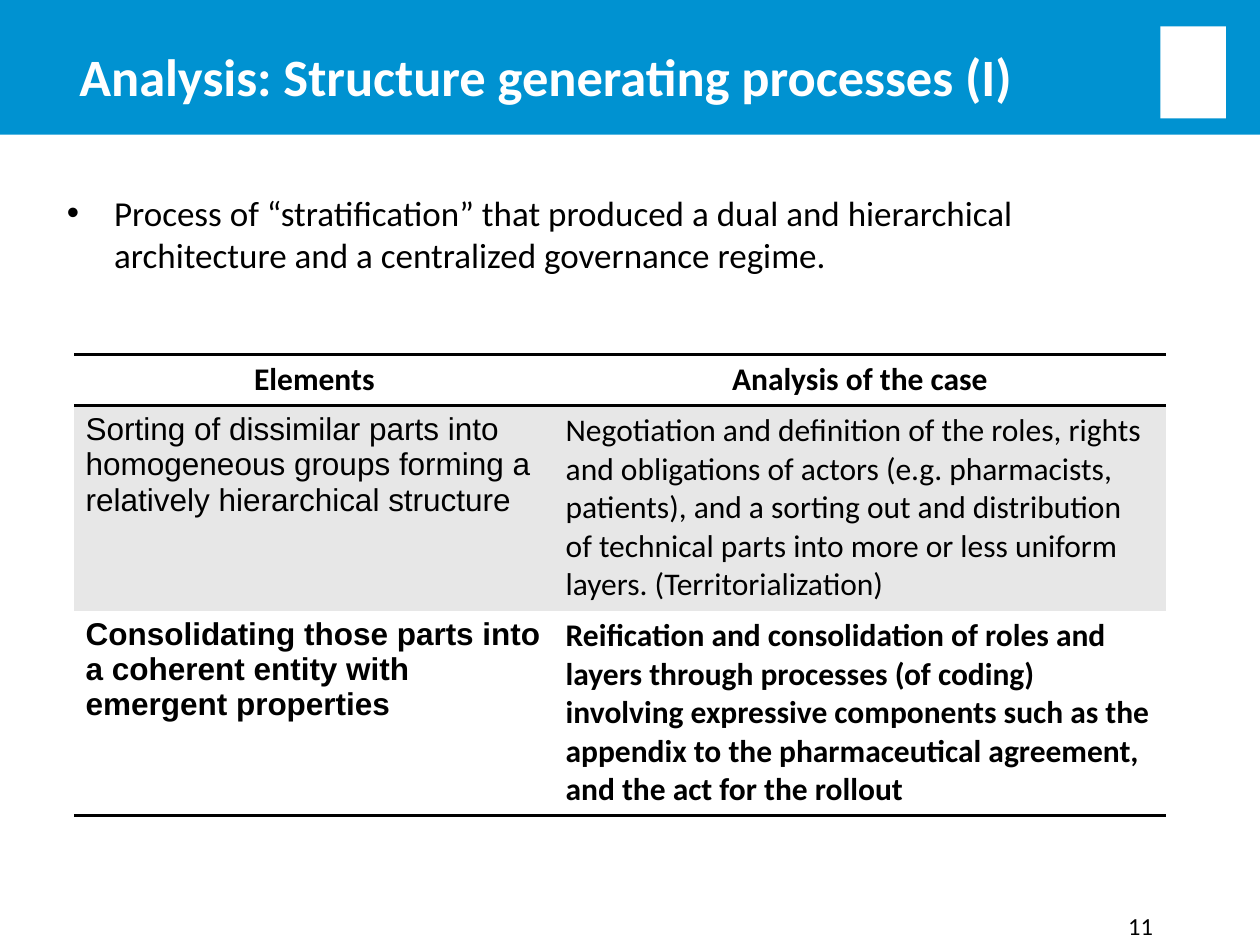
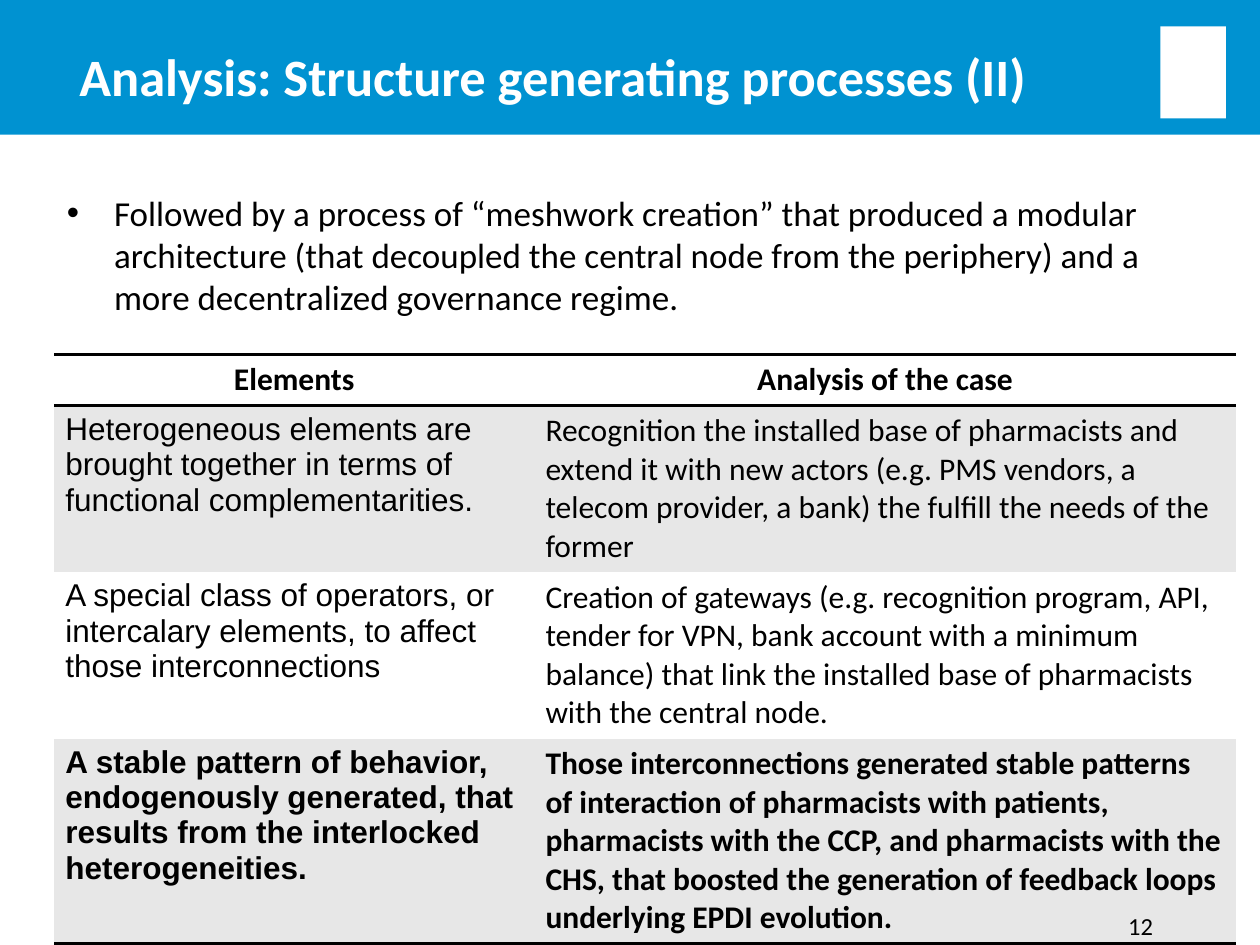
"""Build two slides that analyse structure generating processes."""
import lxml.etree
import pptx
import pptx.dml.color
import pptx.enum.shapes
import pptx.enum.text
import pptx.oxml.ns
import pptx.util

Inches = pptx.util.Inches
Align = pptx.enum.text.PP_ALIGN
Anchor = pptx.enum.text.MSO_ANCHOR

BLUE, WHITE, BLACK, GREY = "0092D1", "FFFFFF", "000000", "E7E7E7"
HEADINGS = ("Elements", "Analysis of the case")
PLAIN_TABLE = "{2D5ABB26-0587-4C30-8999-92F81FD0307C}"
TABLE_TOP, HEADER_HEIGHT, LINE_HEIGHT, CELL_PADDING = 2.81, 0.41, 0.305, 0.1

FORMATS = {
    "title": {"name": "Calibri", "size": 30, "bold": True, "color": WHITE},
    "point": {"name": "Calibri", "size": 20, "bold": False, "color": BLACK},
    "number": {"name": "Calibri", "size": 14, "bold": False, "color": BLACK},
    "element": {"name": "Arial", "size": 18, "bold": False, "color": BLACK},
    "case": {"name": "Calibri", "size": 18, "bold": False, "color": BLACK},
}

HEADER_SHAPES = [((0, 0, 10, 1.07), BLUE), ((9.21, 0.21, 0.52, 0.73), WHITE)]

SLIDES = [
    {
        "number": "11",
        "title": "Analysis: Structure generating processes (I)",
        "point": "Process of “stratification” that produced a dual and hierarchical "
                 "architecture and a centralized governance regime.",
        "point_height": 0.68,
        "table_left": 0.59,
        "columns": (3.81, 4.85),
        "rows": [
            (5, "Sorting of dissimilar parts into homogeneous groups forming a "
                "relatively hierarchical structure",
             "Negotiation and definition of the roles, rights and obligations of actors "
             "(e.g. pharmacists, patients), and a sorting out and distribution of technical "
             "parts into more or less uniform layers. (Territorialization)"),
            (5, "Consolidating those parts into a coherent entity with emergent properties",
             "Reification and consolidation of roles and layers through processes (of coding) "
             "involving expressive components such as the appendix to the pharmaceutical "
             "agreement, and the act for the rollout"),
        ],
    },
    {
        "number": "12",
        "title": "Analysis: Structure generating processes (II)",
        "point": "Followed by a process of “meshwork creation” that produced a modular "
                 "architecture (that decoupled the central node from the periphery) and a "
                 "more decentralized governance regime.",
        "point_height": 1.1,
        "table_left": 0.43,
        "columns": (3.81, 5.57),
        "rows": [
            (4, "Heterogeneous elements are brought together in terms of functional "
                "complementarities.",
             "Recognition the installed base of pharmacists and extend it with new actors "
             "(e.g. PMS vendors, a telecom provider, a bank) the fulfill the needs of the former"),
            (4, "A special class of operators, or intercalary elements, to affect those "
                "interconnections",
             "Creation of gateways (e.g. recognition program, API, tender for VPN, bank account "
             "with a minimum balance) that link the installed base of pharmacists with the "
             "central node."),
            (5, "A stable pattern of behavior, endogenously generated, that results from the "
                "interlocked heterogeneities.",
             "Those interconnections generated stable patterns of interaction of pharmacists "
             "with patients, pharmacists with the CCP, and pharmacists with the CHS, that "
             "boosted the generation of feedback loops underlying EPDI evolution."),
        ],
    },
]


def paint(color_format, color):
    """Set a colour from a hex string."""
    color_format.rgb = pptx.dml.color.RGBColor.from_string(color)


def write(frame, text, kind, align=Align.LEFT, **changes):
    """Put one formatted paragraph in a text frame."""
    para = frame.paragraphs[0]
    para.alignment = align
    para.space_before = pptx.util.Pt(0)
    span = para.add_run()
    span.text = text
    for key, value in {**FORMATS[kind], **changes}.items():
        if key == "color":
            paint(span.font.color, value)
        else:
            setattr(span.font, key, pptx.util.Pt(value) if key == "size" else value)


def place(box, left, top, width, height):
    """Move and size a box, in inches."""
    for name, value in zip(("left", "top", "width", "height"), (left, top, width, height)):
        setattr(box, name, Inches(value))


def add_header(layout, page):
    """Draw the header shapes and move them behind everything on the layout."""
    for order, (bounds, color) in enumerate(HEADER_SHAPES):
        shape = page.shapes.add_shape(
            pptx.enum.shapes.MSO_SHAPE.RECTANGLE, *map(Inches, bounds))
        shape.shadow.inherit = False
        shape.fill.solid()
        paint(shape.fill.fore_color, color)
        shape.line.fill.background()
        shape._element.nvSpPr.cNvPr.set("id", str(100 + order))
        layout.shapes._spTree.insert(2 + order, shape._element)


def add_border(cell, side):
    """Draw a black line of two points on one side of a cell."""
    qn = pptx.oxml.ns.qn
    line = lxml.etree.SubElement(
        cell._tc.get_or_add_tcPr(), qn("a:ln" + side), w=str(pptx.util.Pt(2)))
    fill = lxml.etree.SubElement(line, qn("a:solidFill"))
    lxml.etree.SubElement(fill, qn("a:srgbClr"), val=BLACK)


def add_analysis(page, content):
    """Add the table, with shaded odd rows and a bold last row."""
    rows = [HEADINGS] + [row[1:] for row in content["rows"]]
    heights = [HEADER_HEIGHT] + [CELL_PADDING + LINE_HEIGHT * row[0] for row in content["rows"]]
    widths = content["columns"]
    bounds = (content["table_left"], TABLE_TOP, sum(widths), sum(heights))
    table = page.shapes.add_table(len(rows), len(widths), *map(Inches, bounds)).table
    table.first_row = table.horz_banding = False
    table._tbl.tblPr.find(pptx.oxml.ns.qn("a:tableStyleId")).text = PLAIN_TABLE
    for column, width in zip(table.columns, widths):
        column.width = Inches(width)
    last = len(rows) - 1
    for index, (texts, height) in enumerate(zip(rows, heights)):
        table.rows[index].height = Inches(height)
        sides = {0: "TB", last: "B"}.get(index, "")
        for column, text in enumerate(texts):
            cell = table.cell(index, column)
            cell.margin_left = cell.margin_right = Inches(0.09)
            for side in sides:
                add_border(cell, side)
            cell.fill.solid()
            paint(cell.fill.fore_color, GREY if index % 2 else WHITE)
            write(cell.text_frame, text, "element" if index and not column else "case",
                  Align.LEFT if index else Align.CENTER, bold=index in (0, last))


def add_page(deck, layout, content):
    """Add one slide with title, point, table and number."""
    page = deck.slides.add_slide(layout)
    title, body = page.placeholders
    place(title, 0.53, 0.21, 8.56, 0.78)
    place(body, 0.43, 1.47, 9.06, content["point_height"])
    for box, kind, anchor in ((title, "title", Anchor.MIDDLE), (body, "point", Anchor.TOP)):
        box.text_frame.auto_size = pptx.enum.text.MSO_AUTO_SIZE.NONE
        box.text_frame.vertical_anchor = anchor
        write(box.text_frame, content[kind], kind)
    add_analysis(page, content)
    number = page.shapes.add_textbox(*map(Inches, (7.17, 7.18, 2.08, 0.4)))
    number.text_frame.word_wrap = True
    write(number.text_frame, content["number"], "number", Align.RIGHT)
    return page


def main():
    """Build and save the deck."""
    deck = pptx.Presentation()
    deck.slide_width, deck.slide_height = Inches(10), Inches(7.5)
    layout = deck.slide_layouts[1]
    pages = [add_page(deck, layout, content) for content in SLIDES]
    add_header(layout, pages[0])
    deck.save("out.pptx")


if __name__ == "__main__":
    main()
